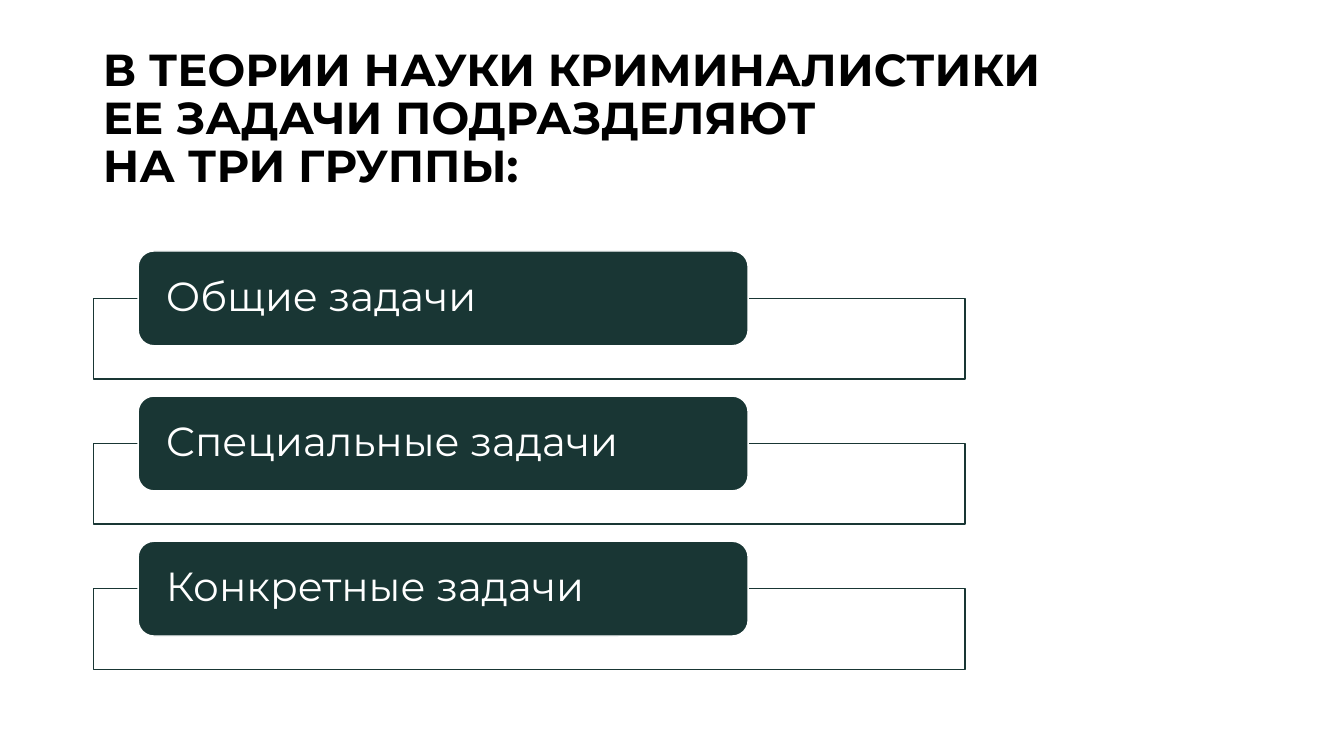
from pptx import Presentation
from pptx.dml.color import RGBColor
from pptx.enum.shapes import MSO_SHAPE
from pptx.enum.text import MSO_ANCHOR, MSO_AUTO_SIZE, PP_ALIGN
from pptx.util import Inches, Pt

RECTANGLE = MSO_SHAPE.RECTANGLE
ROUNDED = MSO_SHAPE.ROUNDED_RECTANGLE
MIDDLE = MSO_ANCHOR.MIDDLE
LEFT = PP_ALIGN.LEFT
NO_AUTOFIT = MSO_AUTO_SIZE.NONE

FONT = "Montserrat"
GREEN = "193634"
WHITE = "FFFFFF"
BLACK = "000000"
TITLE_LINES = [
    "В ТЕОРИИ НАУКИ КРИМИНАЛИСТИКИ ",
    "ЕЕ ЗАДАЧИ ПОДРАЗДЕЛЯЮТ ",
    "НА ТРИ ГРУППЫ:",
]
TASK_GROUPS = ["Общие задачи", "Специальные задачи", "Конкретные задачи"]
FIRST_TOP = 2.49
ROW_STEP = 1.44
FRAME_OFFSET = 0.47


def color(value):
    return RGBColor.from_string(value)


def write_text(shape, text, size, text_color, bold=False):
    text_frame = shape.text_frame
    text_frame.text = text
    text_frame.word_wrap = True
    text_frame.auto_size = NO_AUTOFIT
    text_frame.vertical_anchor = MIDDLE
    paragraph = text_frame.paragraphs[0]
    paragraph.alignment = LEFT
    paragraph.line_spacing = 0.9
    for run in paragraph.runs:
        run.font.name = FONT
        run.font.size = Pt(size)
        run.font.bold = bold
        run.font.color.rgb = color(text_color)


def add_title(slide):
    title = slide.shapes.title
    title.left, title.top = Inches(0.92), Inches(0.29)
    title.width, title.height = Inches(10.25), Inches(1.8)
    write_text(title, "\v".join(TITLE_LINES), 32, BLACK, bold=True)


def add_box(slide, kind, left, top, width, height, fill, line):
    shape = slide.shapes.add_shape(
        kind, Inches(left), Inches(top), Inches(width), Inches(height))
    shape.shadow.inherit = False
    shape.fill.solid()
    shape.fill.fore_color.rgb = color(fill)
    shape.line.color.rgb = color(line)
    shape.line.width = Pt(1)
    return shape


def add_task_group(slide, text, top):
    add_box(slide, RECTANGLE, 0.93, top + FRAME_OFFSET, 8.64, 0.8, WHITE, GREEN)
    label = add_box(slide, ROUNDED, 1.37, top, 6.05, 0.94, GREEN, WHITE)
    write_text(label, text, 29, WHITE)
    text_frame = label.text_frame
    text_frame.margin_left = text_frame.margin_right = Inches(0.23)
    text_frame.margin_top = text_frame.margin_bottom = 0


def main():
    presentation = Presentation()
    presentation.slide_width = Inches(13.33)
    presentation.slide_height = Inches(7.5)
    slide = presentation.slides.add_slide(presentation.slide_layouts[5])
    add_title(slide)
    for index, text in enumerate(TASK_GROUPS):
        add_task_group(slide, text, FIRST_TOP + index * ROW_STEP)
    presentation.save("out.pptx")


if __name__ == "__main__":
    main()
